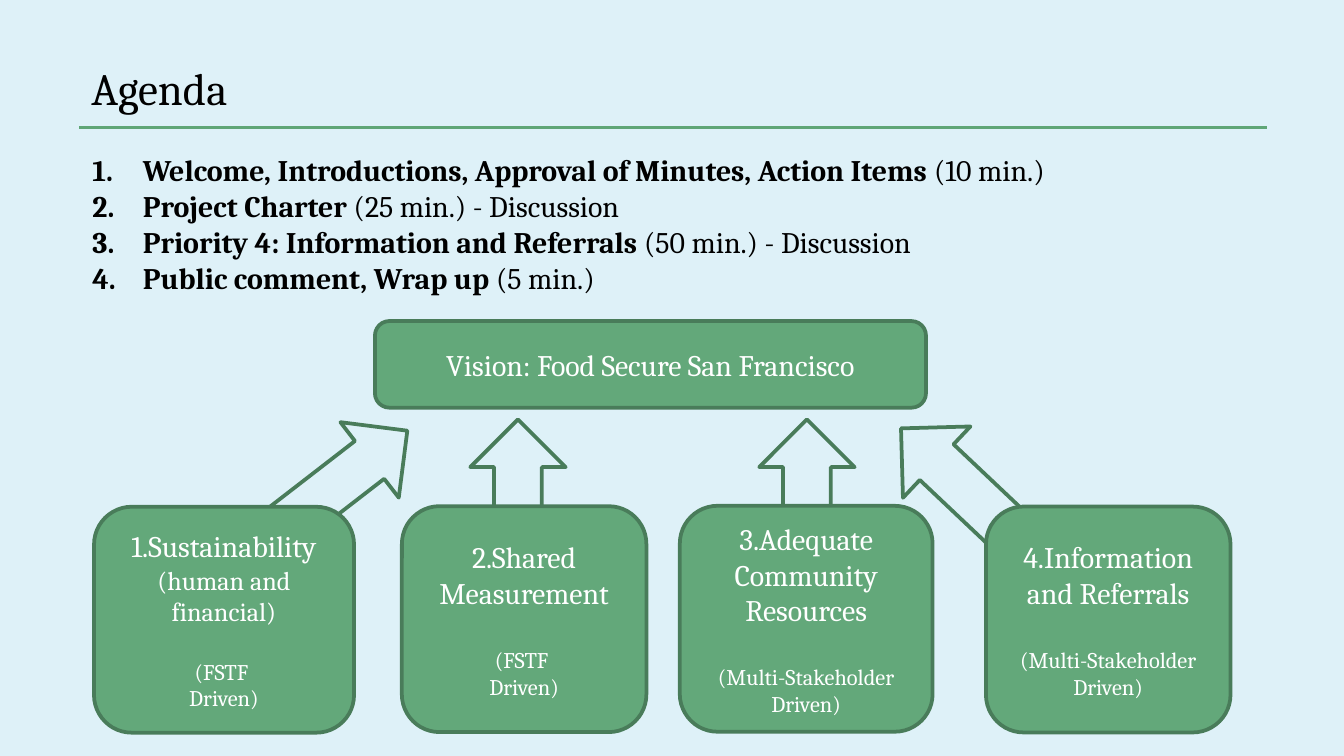
from lxml import etree
from pptx import Presentation
from pptx.dml.color import RGBColor
from pptx.enum.shapes import MSO_CONNECTOR, MSO_SHAPE
from pptx.enum.text import MSO_ANCHOR, PP_ALIGN
from pptx.oxml.ns import qn
from pptx.util import Pt

ROUNDED = MSO_SHAPE.ROUNDED_RECTANGLE
ARROW = MSO_SHAPE.RIGHT_ARROW
STRAIGHT = MSO_CONNECTOR.STRAIGHT
MIDDLE, TOP = MSO_ANCHOR.MIDDLE, MSO_ANCHOR.TOP
CENTER, LEFT = PP_ALIGN.CENTER, PP_ALIGN.LEFT

COLORS = {
    "background": "DEF1F8",
    "box": "63A87A",
    "outline": "497C5A",
    "rule": "5FA677",
    "dark": "000000",
    "light": "FFFFFF",
}

AGENDA = [
    ("Welcome, Introductions, Approval of Minutes, Action Items ", "(10 min.)"),
    ("Project Charter", " (25 min.) - Discussion"),
    ("Priority 4: Information and Referrals", " (50 min.) - Discussion"),
    ("Public comment, Wrap up ", "(5 min.)"),
]
ARROWS = [
    (131.8, 234.7, 96.5, 51.1, 322.3),
    (468.7, 238.3, 102.2, 52.6, 223.4),
    (242.6, 234, 69.8, 51.1, 270),
    (397.4, 234, 69.8, 51.1, 270),
]
FSTF = ["(FSTF ", "Driven)"]
STAKEHOLDER = ["(Multi-Stakeholder Driven)"]
PRIORITIES = [
    (50.4, 271.5, 139.3, [("1.Sustainability", 16), (" (human and financial)", 14)], FSTF, 16.6),
    (215.3, 271.2, 131, [("2.Shared Measurement", 16)], FSTF, 19),
    (364.2, 271, 135.4, [("3.Adequate Community Resources", 16)], STAKEHOLDER, 19),
    (528.2, 271.4, 131, [("4.Information and Referrals", 16)], STAKEHOLDER, 19),
]


class AgendaSlide:
    """Draws agenda elements on one slide in a shared style."""

    def __init__(self, slide, font="Cambria"):
        self.slide = slide
        self.font = font
        self.paint(slide.background.fill, "background")

    def paint(self, fill, color):
        fill.solid()
        fill.fore_color.rgb = RGBColor.from_string(COLORS[color])

    def add_runs(self, paragraph, runs, color, **paragraph_format):
        for name, value in paragraph_format.items():
            setattr(paragraph, name, value)
        for text, size, bold in runs:
            run = paragraph.add_run()
            run.text = text
            values = {"name": self.font, "size": Pt(size), "bold": bold}
            for name, value in values.items():
                setattr(run.font, name, value)
            self.paint(run.font.fill, color)

    def text_box(self, left, top, width, height):
        box = self.slide.shapes.add_textbox(Pt(left), Pt(top), Pt(width), Pt(height))
        frame = box.text_frame
        for name, value in {"word_wrap": True, "vertical_anchor": TOP}.items():
            setattr(frame, name, value)
        return frame

    def title(self, text, *area):
        frame = self.text_box(*area)
        self.add_runs(frame.paragraphs[0], [(text, 24, False)], "dark",
                      alignment=LEFT, line_spacing=1.56)

    def numbered_list(self, items, *area):
        frame = self.text_box(*area)
        for index, (topic, detail) in enumerate(items):
            paragraph = frame.add_paragraph() if index else frame.paragraphs[0]
            self.add_runs(paragraph, [(topic, 16, True), (detail, 16, False)], "dark")
            properties = paragraph._p.get_or_add_pPr()
            indent = Pt(27)
            for name, value in {"marL": indent, "indent": -indent}.items():
                properties.set(name, str(value))
            bullet_color = etree.SubElement(properties, qn("a:buClr"))
            etree.SubElement(bullet_color, qn("a:srgbClr"), val=COLORS["dark"])
            etree.SubElement(properties, qn("a:buAutoNum"), type="arabicPeriod")

    def rule(self, left, right, y):
        line = self.slide.shapes.add_connector(STRAIGHT, Pt(left), Pt(y), Pt(right), Pt(y))
        self.paint(line.line.fill, "rule")
        line.line.width = Pt(1.5)
        etree.SubElement(line._element.spPr, qn("a:effectLst"))

    def outlined(self, kind, left, top, width, height, fill):
        shape = self.slide.shapes.add_shape(kind, Pt(left), Pt(top), Pt(width), Pt(height))
        shape.shadow.inherit = False
        self.paint(shape.fill, fill)
        self.paint(shape.line.fill, "outline")
        shape.line.width = Pt(2)
        return shape

    def arrow(self, left, top, width, height, rotation):
        shape = self.outlined(ARROW, left, top, width, height, "background")
        shape.rotation = rotation

    def box(self, left, top, width, height, heading, notes=(), gap=0):
        frame = self.outlined(ROUNDED, left, top, width, height, "box").text_frame
        frame.vertical_anchor = MIDDLE
        runs = [(text, size, False) for text, size in heading]
        self.add_runs(frame.paragraphs[0], runs, "light", alignment=CENTER)
        for index, note in enumerate(notes):
            self.add_runs(frame.add_paragraph(), [(note, 12, False)], "light",
                          alignment=CENTER, space_before=Pt(0 if index else gap))


def main():
    presentation = Presentation()
    for name, value in {"slide_width": Pt(720), "slide_height": Pt(405)}.items():
        setattr(presentation, name, value)
    agenda = AgendaSlide(presentation.slides.add_slide(presentation.slide_layouts[6]))
    for arrow in ARROWS:
        agenda.arrow(*arrow)
    agenda.title("Agenda", 41.8, 13, 637.2, 55.4)
    agenda.rule(42.5, 679, 68.5)
    agenda.numbered_list(AGENDA, 42.5, 77.8, 636.5, 123.8)
    agenda.box(200.9, 172, 295.2, 46.4, [("Vision: Food Secure San Francisco", 16)])
    for left, top, width, heading, notes, gap in PRIORITIES:
        agenda.box(left, top, width, 121, heading, notes, gap)
    presentation.save("out.pptx")


if __name__ == "__main__":
    main()
